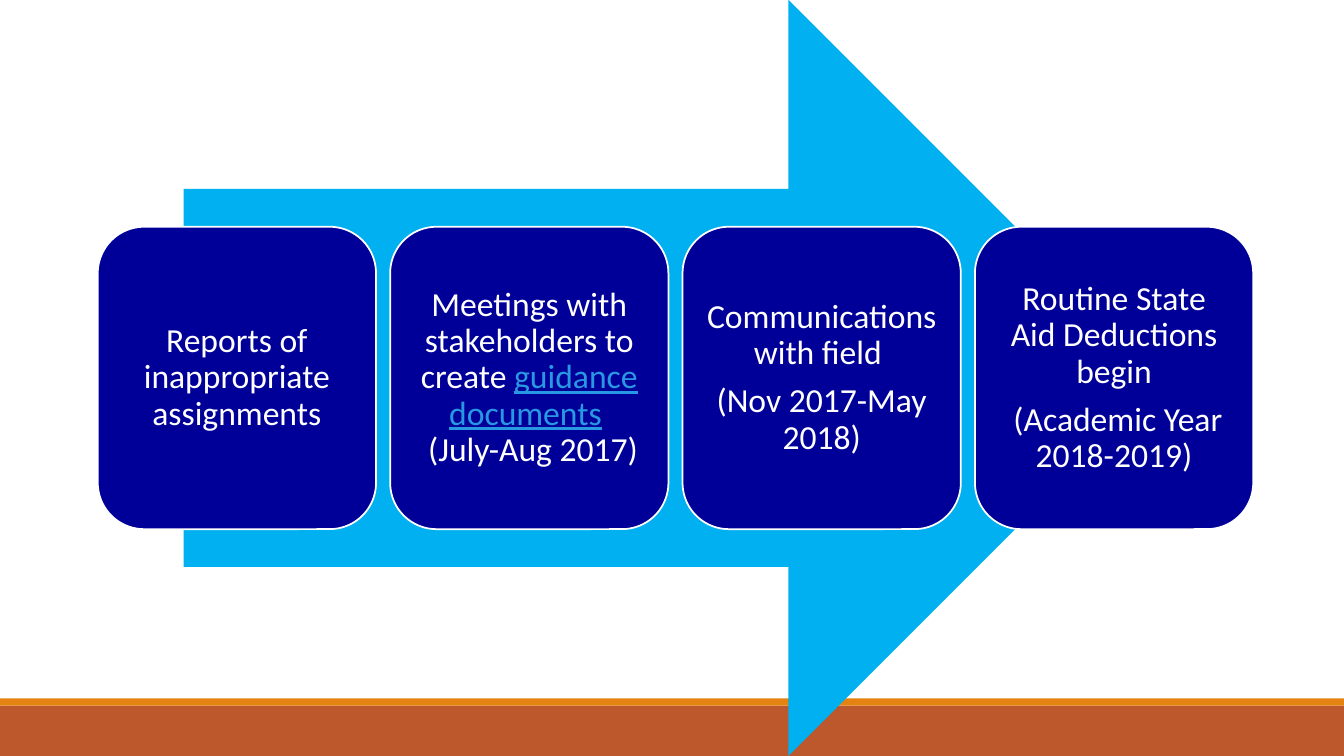
from dataclasses import dataclass

from pptx import Presentation
from pptx import util as u
from pptx.dml.color import RGBColor
from pptx.enum import shapes, text

WHITE, NAVY, SKY = "FFFFFF", "000099", "00B0F0"
LINK, RUST, ORANGE = "2998E3", "BD582C", "E48312"
SLIDE_WIDTH, SLIDE_HEIGHT = 13.33, 7.5
CARD_LEFT, CARD_TOP, CARD_PITCH = 0.97, 2.25, 2.9
CARD_WIDTH, CARD_HEIGHT = 2.76, 3
CARD_INSET = 0.1


@dataclass(frozen=True)
class Segment:
    text: str
    linked: bool = False
    new_line: bool = False


@dataclass(frozen=True)
class Block:
    kind: shapes.MSO_SHAPE
    left: float
    top: float
    width: float
    height: float
    fill: str


BACKDROP = [
    Block(shapes.MSO_SHAPE.RECTANGLE, 0, 7, SLIDE_WIDTH, 0.5, RUST),
    Block(shapes.MSO_SHAPE.RECTANGLE, 0, 6.93, SLIDE_WIDTH, 0.07, ORANGE),
    Block(shapes.MSO_SHAPE.RIGHT_ARROW, 1.82, 0, 9.75, SLIDE_HEIGHT, SKY),
]

# Each step is a list of paragraphs, each paragraph a list of segments.
STEPS = [
    [[Segment("Reports of inappropriate assignments")]],
    [[
        Segment("Meetings with stakeholders to create "),
        Segment("guidance documents", linked=True),
        Segment(" "),
        Segment(" (July-Aug 2017)", new_line=True),
    ]],
    [[Segment("Communications with field ")], [Segment("(Nov 2017-May 2018)")]],
    [[Segment("Routine State Aid Deductions begin")],
     [Segment(" (Academic Year 2018-2019)")]],
]


def color(value: str) -> RGBColor:
    return RGBColor.from_string(value)


def add_block(slide, block: Block):
    shape = slide.shapes.add_shape(
        block.kind, u.Inches(block.left), u.Inches(block.top),
        u.Inches(block.width), u.Inches(block.height))
    shape.shadow.inherit = False
    shape.fill.solid()
    shape.fill.fore_color.rgb = color(block.fill)
    shape.line.fill.background()
    return shape


def write_paragraph(paragraph, segments: list[Segment]) -> None:
    paragraph.alignment = text.PP_ALIGN.CENTER
    paragraph.line_spacing = 0.9
    paragraph.space_after = u.Pt(8.4)
    for segment in segments:
        if segment.new_line:
            paragraph.add_line_break()
        run = paragraph.add_run()
        run.text = segment.text
        run.font.name = "Calibri"
        run.font.size = u.Pt(24)
        run.font.underline = segment.linked
        run.font.color.rgb = color(LINK if segment.linked else WHITE)


def add_step(slide, index: int, paragraphs: list[list[Segment]]) -> None:
    card = add_block(slide, Block(
        shapes.MSO_SHAPE.ROUNDED_RECTANGLE, CARD_LEFT + index * CARD_PITCH,
        CARD_TOP, CARD_WIDTH, CARD_HEIGHT, NAVY))
    card.line.color.rgb = color(WHITE)
    card.line.width = u.Pt(1.25)
    frame = card.text_frame
    frame.word_wrap = True
    frame.vertical_anchor = text.MSO_ANCHOR.MIDDLE
    frame.margin_left = frame.margin_right = u.Inches(CARD_INSET)
    frame.margin_top = frame.margin_bottom = u.Inches(CARD_INSET)
    for number, segments in enumerate(paragraphs):
        paragraph = frame.add_paragraph() if number else frame.paragraphs[0]
        write_paragraph(paragraph, segments)


def main() -> None:
    presentation = Presentation()
    presentation.slide_width = u.Inches(SLIDE_WIDTH)
    presentation.slide_height = u.Inches(SLIDE_HEIGHT)
    slide = presentation.slides.add_slide(presentation.slide_layouts[6])
    for block in BACKDROP:
        add_block(slide, block)
    for index, paragraphs in enumerate(STEPS):
        add_step(slide, index, paragraphs)
    presentation.save("out.pptx")


if __name__ == "__main__":
    main()
